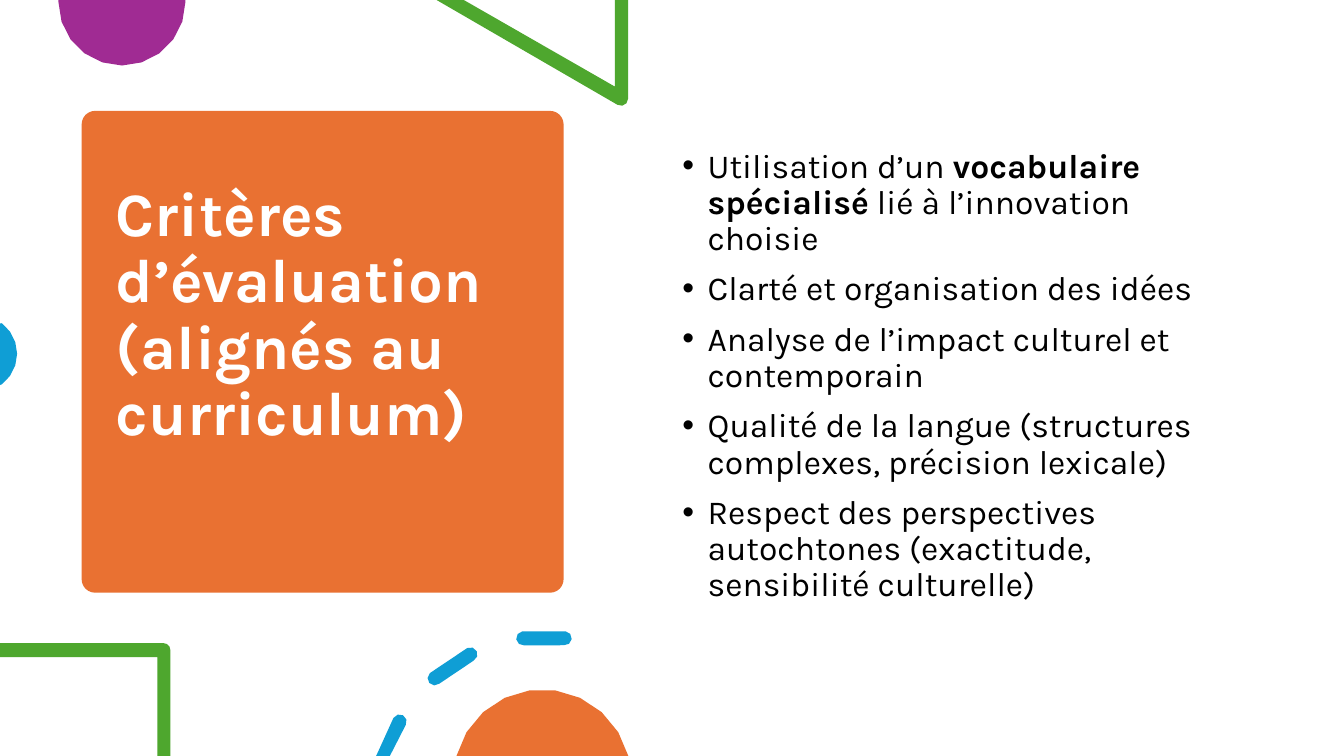
from math import ceil, cos, radians, sin

from lxml import etree
from pptx import Presentation
from pptx.dml.color import RGBColor
from pptx.enum.shapes import MSO_SHAPE
from pptx.enum.text import MSO_ANCHOR
from pptx.oxml.ns import qn
from pptx.util import Inches, Pt

ROUNDED = MSO_SHAPE.ROUNDED_RECTANGLE
MIDDLE = MSO_ANCHOR.MIDDLE
TOP = MSO_ANCHOR.TOP

ORANGE = RGBColor(0xE9, 0x71, 0x32)
PURPLE = RGBColor(0xA0, 0x2B, 0x93)
GREEN = RGBColor(0x4E, 0xA7, 0x2E)
BLUE = RGBColor(0x0F, 0x9E, 0xD5)
WHITE = RGBColor(0xFF, 0xFF, 0xFF)
BLACK = RGBColor(0x00, 0x00, 0x00)

FONT = "Karla"
WIDTH, HEIGHT = 13.33, 7.5
STROKE = 0.07

TITLE = "Critères d’évaluation (alignés au curriculum)"
CRITERIA = [
    [("Utilisation d’un ", False), ("vocabulaire spécialisé", True),
     (" lié à l’innovation choisie", False)],
    [("Clarté et organisation des idées", False)],
    [("Analyse de l’impact culturel et contemporain", False)],
    [("Qualité de la langue (structures complexes, précision lexicale)", False)],
    [("Respect des perspectives autochtones (exactitude, sensibilité culturelle)", False)],
]


def arc(cx, cy, radius, start, end, step=18):
    count = ceil(abs(end - start) / step)
    angles = [radians(start + (end - start) * i / count) for i in range(count + 1)]
    return [(cx + radius * cos(a), cy + radius * sin(a)) for a in angles]


def paint(s, color):
    s.shadow.inherit = False
    s.fill.solid()
    s.fill.fore_color.rgb = color
    s.line.fill.background()


def add_outline(slide, color, *contours):
    builder = None
    for points in contours:
        corners = [(Inches(x), Inches(min(y, HEIGHT))) for x, y in points]
        if builder is None:
            builder = slide.shapes.build_freeform(*corners[0], scale=1)
        else:
            builder.move_to(*corners[0])
        builder.add_line_segments(corners[1:], close=True)
    paint(builder.convert_to_shape(), color)


def dash_points(cx, cy, radius, start, end):
    tips = [(cx + radius * cos(radians(a)), cy + radius * sin(radians(a)))
            for a in (start, end)]
    return (arc(*tips[1], STROKE, end, end + 180, 45)
            + arc(*tips[0], STROKE, start + 180, start + 360, 45))


def add_top_decor(slide):
    add_outline(slide, PURPLE, [(0.58, 0), (1.84, 0)] + arc(1.21, 0.02, 0.63, 0, 180))
    corner = arc(6.16, 0.98, STROKE, 120, 0, 40)
    add_outline(slide, GREEN,
                [(6.23, 0), (6.1, 0), (6.1, 0.86), (4.6, 0), (4.33, 0)] + corner)


def add_side_decor(slide):
    add_outline(slide, BLUE, [(0, 3.82), (0, 3.21)] + arc(-0.21, 3.51, 0.38, -53, 53))


def add_bottom_decor(slide):
    corner = arc(1.62, 6.45, STROKE, 0, -90, 30)
    add_outline(slide, GREEN, [(1.69, HEIGHT)] + corner
                + [(0, 6.38), (0, 6.52), (1.56, 6.52), (1.56, HEIGHT)])
    spans = ((-166, -150.5), (-131.3, -116.4), (-97.3, -83))
    add_outline(slide, BLUE, *[dash_points(5.4, 7.97, 1.65, *span) for span in spans])
    add_outline(slide, ORANGE, arc(5.38, 7.72, 0.88, -165.6, -14.4))


def add_text_box(slide, left, top, width, height, anchor):
    box = slide.shapes.add_textbox(*map(Inches, (left, top, width, height)))
    tf = box.text_frame
    tf.word_wrap = True
    tf.vertical_anchor = anchor
    return tf


def format_run(r, size, color, bold):
    r.font.name = FONT
    r.font.size = Pt(size)
    r.font.bold = bold
    r.font.color.rgb = color


def add_title_card(slide, left, top, side):
    card = slide.shapes.add_shape(ROUNDED, *map(Inches, (left, top, side, side)))
    card.adjustments[0] = 0.028
    paint(card, ORANGE)
    tf = add_text_box(slide, left + 0.24, top + 0.1, side - 0.47, side - 0.91, MIDDLE)
    p = tf.paragraphs[0]
    p.text = TITLE
    p.line_spacing = 0.9
    format_run(p.runs[0], 44, WHITE, True)


def add_bullet(p):
    pPr = p._p.get_or_add_pPr()
    pPr.set("marL", str(Inches(0.25)))
    pPr.set("indent", str(-Inches(0.25)))
    etree.SubElement(pPr, qn("a:buFont"), typeface="Arial")
    etree.SubElement(pPr, qn("a:buChar"), char="•")


def add_criteria(slide, left, top, width, height):
    tf = add_text_box(slide, left, top, width, height, TOP)
    for i, pieces in enumerate(CRITERIA):
        p = tf.add_paragraph() if i else tf.paragraphs[0]
        add_bullet(p)
        p.line_spacing = 0.9
        if i:
            p.space_before = Pt(10)
        for text, bold in pieces:
            r = p.add_run()
            r.text = text
            format_run(r, 24, BLACK, bold)


def main():
    prs = Presentation()
    prs.slide_width = Inches(WIDTH)
    prs.slide_height = Inches(HEIGHT)
    slide = prs.slides.add_slide(prs.slide_layouts[6])
    slide.background.fill.solid()
    slide.background.fill.fore_color.rgb = WHITE
    add_title_card(slide, 0.81, 1.1, 4.78)
    add_top_decor(slide)
    add_side_decor(slide)
    add_criteria(slide, 6.67, 1.43, 5.75, 4.82)
    add_bottom_decor(slide)
    prs.save("out.pptx")


if __name__ == "__main__":
    main()
